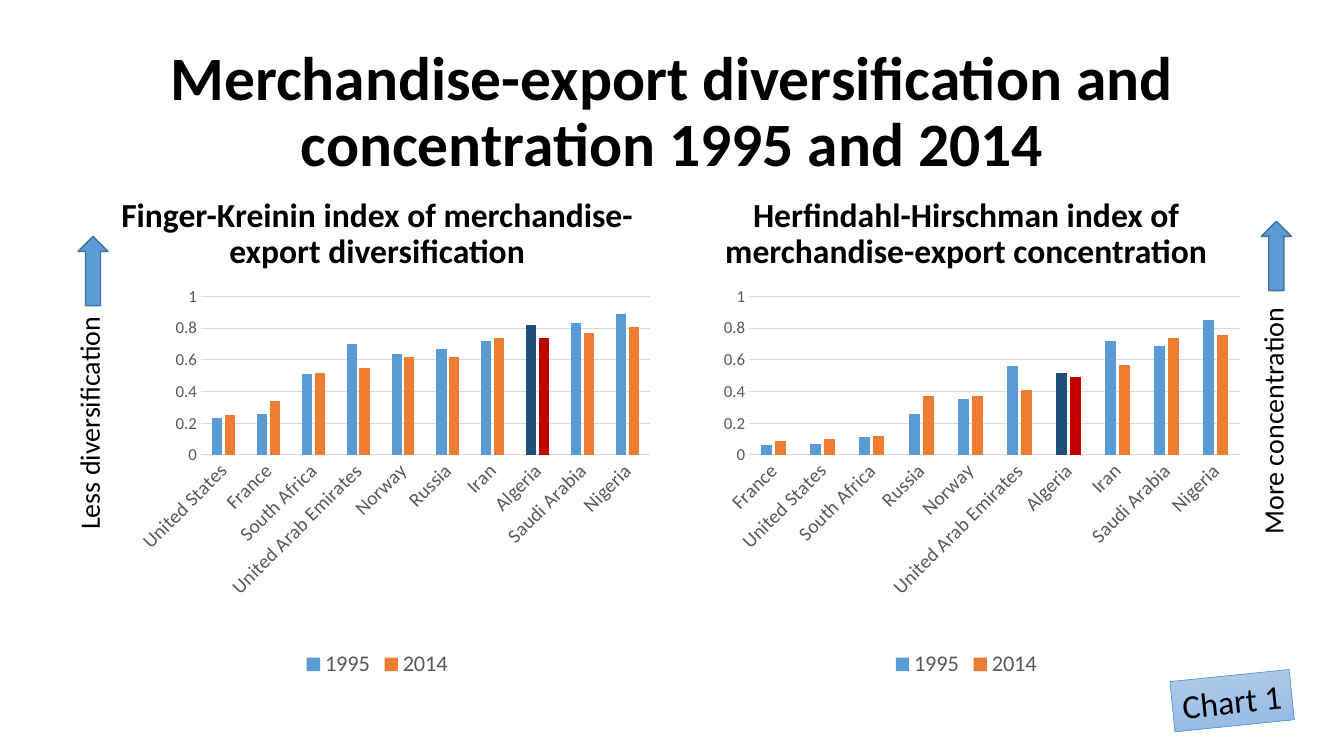
"""Build a slide comparing export diversification and concentration in 1995 and 2014."""
from lxml import etree
from pptx import Presentation
from pptx.chart.data import CategoryChartData
from pptx.dml.color import RGBColor
from pptx.enum.chart import XL_CHART_TYPE, XL_LEGEND_POSITION, XL_TICK_MARK
from pptx.enum.shapes import MSO_SHAPE
from pptx.enum.text import MSO_ANCHOR, PP_ALIGN
from pptx.oxml.ns import qn
from pptx.util import Cm, Pt

COLUMNS = XL_CHART_TYPE.COLUMN_CLUSTERED
BOTTOM_LEGEND = XL_LEGEND_POSITION.BOTTOM
NO_TICK = XL_TICK_MARK.NONE
RIGHT_ARROW, RECTANGLE = MSO_SHAPE.RIGHT_ARROW, MSO_SHAPE.RECTANGLE
MIDDLE, BOTTOM, TOP = MSO_ANCHOR.MIDDLE, MSO_ANCHOR.BOTTOM, MSO_ANCHOR.TOP
CENTER, LEFT = PP_ALIGN.CENTER, PP_ALIGN.LEFT

BLACK = RGBColor(0x00, 0x00, 0x00)
GRAY = RGBColor(0x59, 0x59, 0x59)
LIGHT_GRAY = RGBColor(0xD9, 0xD9, 0xD9)
BLUE = RGBColor(0x5B, 0x9B, 0xD5)
ORANGE = RGBColor(0xED, 0x7D, 0x31)
NAVY = RGBColor(0x1F, 0x4E, 0x79)
RED = RGBColor(0xC0, 0x00, 0x00)
ARROW_EDGE = RGBColor(0x43, 0x73, 0x9E)
BADGE_LIGHT = RGBColor(0xB1, 0xCB, 0xE9)
BADGE_DARK = RGBColor(0x93, 0xB9, 0xE4)

FONT = "Calibri"
HIGHLIGHT = "Algeria"
YEARS = [("1995", BLUE, NAVY), ("2014", ORANGE, RED)]

PANELS = [
    {
        "heading": "Finger-Kreinin index of merchandise-export diversification",
        "left": 2.34, "width": 14.33, "plot": (0.19, 0.79),
        "countries": ["United States", "France", "South Africa", "United Arab Emirates",
                      "Norway", "Russia", "Iran", "Algeria", "Saudi Arabia", "Nigeria"],
        "1995": [0.23, 0.26, 0.51, 0.7, 0.64, 0.67, 0.72, 0.82, 0.83, 0.89],
        "2014": [0.25, 0.34, 0.52, 0.55, 0.62, 0.62, 0.74, 0.74, 0.77, 0.81],
        "direction": "Less diversification",
        "direction_box": (-0.81, 9.98, 6.12, 1.12), "arrow": (1.47, 6.45),
    },
    {
        "heading": "Herfindahl-Hirschman index of merchandise-export concentration",
        "left": 17.15, "width": 14.4, "plot": (0.12, 0.86),
        "countries": ["France", "United States", "South Africa", "Russia", "Norway",
                      "United Arab Emirates", "Algeria", "Iran", "Saudi Arabia", "Nigeria"],
        "1995": [0.06, 0.07, 0.11, 0.26, 0.35, 0.56, 0.52, 0.72, 0.69, 0.85],
        "2014": [0.09, 0.1, 0.12, 0.37, 0.37, 0.41, 0.49, 0.57, 0.74, 0.76],
        "direction": "More concentration",
        "direction_box": (28.93, 10.01, 6.3, 1.12), "arrow": (31.29, 6.07),
    },
]


def write(shape, text, size, bold, align, anchor, wrap):
    frame = shape.text_frame
    frame.text = text
    frame.word_wrap = wrap
    frame.vertical_anchor = anchor
    paragraph = frame.paragraphs[0]
    paragraph.alignment = align
    if bold:
        paragraph.line_spacing = 0.9
    style(paragraph.runs[0].font, size, BLACK)
    paragraph.runs[0].font.bold = bold


def style(font, size, color):
    font.name = FONT
    font.size = Pt(size)
    font.color.rgb = color


prs = Presentation()
prs.slide_width, prs.slide_height = Cm(33.87), Cm(19.05)
slide = prs.slides.add_slide(prs.slide_layouts[5])
shapes = slide.shapes

title = shapes.title
title.left, title.top, title.width, title.height = Cm(2.34), Cm(1.02), Cm(29.21), Cm(3.68)
write(title, "Merchandise-export diversification and concentration 1995 and 2014",
      44, True, CENTER, MIDDLE, True)

for panel in PANELS:
    left, width = Cm(panel["left"]), Cm(panel["width"])
    heading = shapes.add_textbox(left, Cm(4.67), width, Cm(2.29))
    write(heading, panel["heading"], 24, True, CENTER, BOTTOM, True)

    index_data = CategoryChartData()
    index_data.categories = panel["countries"]
    for year, _, _ in YEARS:
        index_data.add_series(year, panel[year])
    chart = shapes.add_chart(COLUMNS, left, Cm(6.96), width, Cm(10.24), index_data).chart
    chart.has_title = False
    style(chart.font, 10, BLACK)
    chart.has_legend = True
    chart.legend.position = BOTTOM_LEGEND
    chart.legend.include_in_layout = False
    style(chart.legend.font, 16, GRAY)

    countries = chart.category_axis
    countries.major_tick_mark = NO_TICK
    countries.format.line.color.rgb = LIGHT_GRAY
    countries.format.line.width = Pt(0.75)
    style(countries.tick_labels.font, 14, GRAY)
    countries.tick_labels.font._element.getparent().getparent().getparent().find(
        qn("a:bodyPr")).set("rot", "-2700000")

    scale = chart.value_axis
    scale.minimum_scale, scale.maximum_scale, scale.major_unit = 0, 1, 0.2
    scale.major_tick_mark = NO_TICK
    scale.format.line.fill.background()
    scale.major_gridlines.format.line.color.rgb = LIGHT_GRAY
    scale.major_gridlines.format.line.width = Pt(0.75)
    scale.tick_labels.number_format = "General"
    scale.tick_labels.number_format_is_linked = False
    style(scale.tick_labels.font, 12, GRAY)

    bars = chart.plots[0]
    bars.gap_width, bars.overlap, bars.vary_by_categories = 219, -27, False
    for series, (_, color, highlight_color) in zip(bars.series, YEARS):
        series.format.fill.solid()
        series.format.fill.fore_color.rgb = color
        highlight = series.points[panel["countries"].index(HIGHLIGHT)].format.fill
        highlight.solid()
        highlight.fore_color.rgb = highlight_color

    plot_area = chart._chartSpace.chart.plotArea
    for old_layout in plot_area.findall(qn("c:layout")):
        plot_area.remove(old_layout)
    layout = etree.Element(qn("c:layout"))
    manual = etree.SubElement(layout, qn("c:manualLayout"))
    plot_left, plot_width = panel["plot"]
    for tag, value in [("layoutTarget", "inner"), ("xMode", "edge"), ("yMode", "edge"),
                       ("x", plot_left), ("y", 0.05), ("w", plot_width), ("h", 0.39)]:
        etree.SubElement(manual, qn(f"c:{tag}")).set("val", str(value))
    plot_area.insert(0, layout)

for panel in PANELS:
    direction = shapes.add_textbox(*map(Cm, panel["direction_box"]))
    direction.rotation = 270
    write(direction, panel["direction"], 20, False, LEFT, TOP, False)

    arrow = shapes.add_shape(RIGHT_ARROW, *map(Cm, panel["arrow"]), Cm(1.75), Cm(0.76))
    arrow.rotation = 270
    arrow.shadow.inherit = False
    arrow.fill.solid()
    arrow.fill.fore_color.rgb = BLUE
    arrow.line.color.rgb = ARROW_EDGE
    arrow.line.width = Pt(1)

badge = shapes.add_shape(RECTANGLE, Cm(29.54), Cm(17.02), Cm(3.02), Cm(1.27))
badge.rotation = 354.2
badge.shadow.inherit = False
badge.fill.gradient()
badge.fill.gradient_angle = 270
for stop, color in zip(badge.fill.gradient_stops, (BADGE_LIGHT, BADGE_DARK)):
    stop.color.rgb = color
badge.line.color.rgb = BLUE
badge.line.width = Pt(0.5)
write(badge, "Chart 1", 24, False, LEFT, TOP, False)

prs.save("out.pptx")
